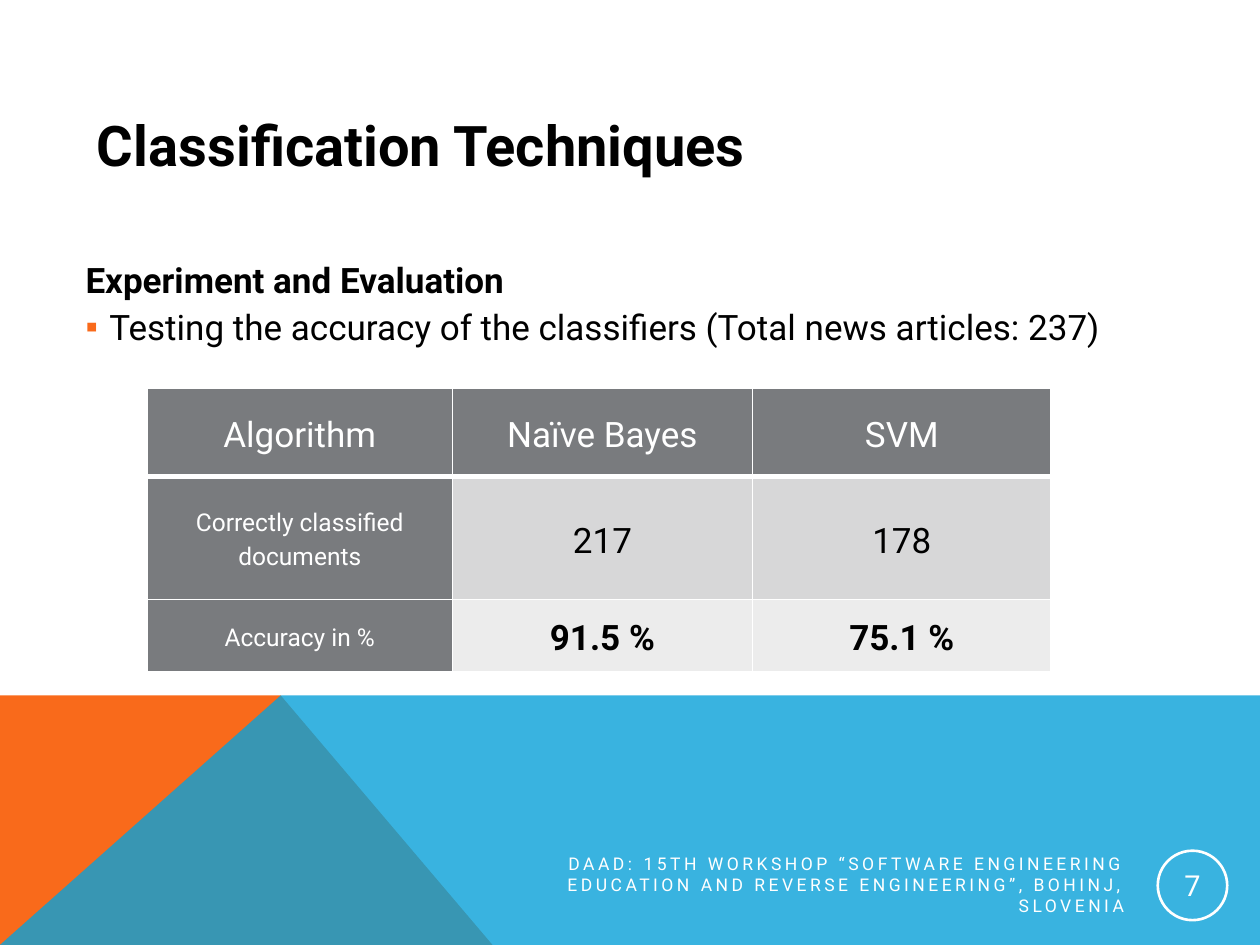
from lxml.etree import SubElement
from pptx import Presentation
from pptx.dml.color import RGBColor
from pptx.enum.shapes import MSO_SHAPE
from pptx.enum.text import MSO_ANCHOR as Anchor, MSO_AUTO_SIZE, PP_ALIGN as Align
from pptx.oxml.ns import qn
from pptx.util import Cm, Pt

COLORS = {
    "orange": "F96A1B",
    "blue": "08A1D9",
    "gray": "797B7E",
    "band_dark": "D7D7D8",
    "band_light": "ECECEC",
    "white": "FFFFFF",
    "black": "000000",
}
FONT = "Roboto"
WIDTH, HEIGHT = 25.4, 19.05


def rgb(name):
    return RGBColor.from_string(COLORS[name])


def write(paragraph, text, size=20, color="black", bold=False, align=Align.LEFT,
          before=0, line_spacing=None, tracking=None):
    paragraph.alignment = align
    paragraph.space_before = Pt(before)
    if line_spacing:
        paragraph.line_spacing = line_spacing
    run = paragraph.add_run()
    run.text = text
    font = run.font
    font.name, font.size, font.bold = FONT, Pt(size), bold
    font.color.rgb = rgb(color)
    if tracking:
        run._r.get_or_add_rPr().set("spc", str(tracking * 100))


def set_bullet(paragraph, indent, char=None, color="orange"):
    """Give the paragraph a hanging indent and a bullet, or none without char."""
    properties = paragraph._p.get_or_add_pPr()
    properties.set("marL", str(Cm(indent)))
    properties.set("indent", str(-Cm(indent)))
    if char is None:
        SubElement(properties, qn("a:buNone"))
        return
    bullet_color = SubElement(properties, qn("a:buClr"))
    SubElement(bullet_color, qn("a:srgbClr")).set("val", COLORS[color])
    SubElement(properties, qn("a:buChar")).set("char", char)


def place(shape, left, top, width, height):
    """Move a placeholder to the box and in front of the background."""
    shape.left, shape.top = Cm(left), Cm(top)
    shape.width, shape.height = Cm(width), Cm(height)
    shape.element.getparent().append(shape.element)
    frame = shape.text_frame
    frame.auto_size = MSO_AUTO_SIZE.NONE
    frame.vertical_anchor = Anchor.TOP
    frame.word_wrap = True
    return frame


def add_polygon(slide, points, color, opacity=None):
    start, *others = [(Cm(x), Cm(y)) for x, y in points]
    builder = slide.shapes.build_freeform(*start)
    builder.add_line_segments(others, close=True)
    shape = builder.convert_to_shape()
    shape.shadow.inherit = False
    shape.fill.solid()
    shape.fill.fore_color.rgb = rgb(color)
    shape.line.fill.background()
    if opacity:
        color_node = shape.element.spPr.find(qn("a:solidFill"))[0]
        SubElement(color_node, qn("a:alpha")).set("val", str(opacity * 1000))


def add_background(slide, left, top, width, height):
    bottom, peak = top + height, left + 5.66
    add_polygon(slide, [(left, bottom), (left, top), (peak, top),
                        (left + 9.93, bottom)], "orange")
    add_polygon(slide, [(left, bottom), (peak, top), (left + width, top),
                        (left + width, bottom)], "blue", opacity=80)


def add_title(slide, *box):
    paragraph = place(slide.shapes.title, *box).paragraphs[0]
    write(paragraph, "Classification Techniques", size=32, bold=True, before=8)


def add_body(slide, *box):
    frame = place(slide.placeholders[1], *box)
    heading = frame.paragraphs[0]
    write(heading, "Experiment and Evaluation", bold=True, before=8)
    set_bullet(heading, 0.97)
    item = frame.add_paragraph()
    item.level = 1
    write(item, "Testing the accuracy of the classifiers (Total news articles: 237)",
          before=3)
    set_bullet(item, 0.48, "▪")


def set_borders(cell, bottom_width):
    properties = cell._tc.get_or_add_tcPr()
    for side, width in (("L", 1), ("R", 1), ("T", 1), ("B", bottom_width)):
        line = SubElement(properties, qn(f"a:ln{side}"))
        line.set("w", str(Pt(width)))
        fill = SubElement(line, qn("a:solidFill"))
        SubElement(fill, qn("a:srgbClr")).set("val", COLORS["white"])


def add_results(slide, left, top, column_widths, row_heights):
    rows = [
        ("Algorithm", "Naïve Bayes", "SVM"),
        ("Correctly classified documents", "217", "178"),
        ("Accuracy in %", "91.5 %", "75.1 %"),
    ]
    row_fills = ("gray", "band_dark", "band_light")
    table = slide.shapes.add_table(
        len(rows), len(rows[0]), Cm(left), Cm(top),
        Cm(sum(column_widths)), Cm(sum(row_heights))).table
    for column, width in zip(table.columns, column_widths):
        column.width = Cm(width)
    for row, height in zip(table.rows, row_heights):
        row.height = Cm(height)
    for r, texts in enumerate(rows):
        for c, text in enumerate(texts):
            cell = table.cell(r, c)
            is_header = r == 0 or c == 0
            set_borders(cell, 3 if r == 0 else 1)
            cell.fill.solid()
            cell.fill.fore_color.rgb = rgb("gray" if is_header else row_fills[r])
            cell.vertical_anchor = Anchor.MIDDLE
            cell.margin_left = cell.margin_right = Cm(0.18)
            cell.margin_top = cell.margin_bottom = 0
            write(cell.text_frame.paragraphs[0], text,
                  size=14 if c == 0 and r > 0 else 20,
                  color="white" if is_header else "black",
                  bold=r == 2 and c > 0, align=Align.CENTER, line_spacing=1.15)


def add_footer(slide, left, top, width, height):
    box = slide.shapes.add_textbox(Cm(left), Cm(top), Cm(width), Cm(height))
    frame = box.text_frame
    frame.word_wrap = True
    frame.vertical_anchor = Anchor.MIDDLE
    write(frame.paragraphs[0],
          "DAAD: 15TH WORKSHOP “SOFTWARE ENGINEERING EDUCATION AND "
          "REVERSE ENGINEERING”, BOHINJ, SLOVENIA",
          size=10, color="white", align=Align.RIGHT, tracking=2)


def add_page_number(slide, left, top, diameter):
    circle = slide.shapes.add_shape(MSO_SHAPE.OVAL, Cm(left), Cm(top),
                                    Cm(diameter), Cm(diameter))
    circle.shadow.inherit = False
    circle.fill.background()
    circle.line.color.rgb = rgb("white")
    circle.line.width = Pt(1.5)
    frame = circle.text_frame
    frame.vertical_anchor = Anchor.MIDDLE
    frame.margin_left = frame.margin_right = Cm(0.03)
    frame.margin_top = frame.margin_bottom = Cm(0.03)
    write(frame.paragraphs[0], "7", size=16.5, color="white", align=Align.CENTER)


def main():
    presentation = Presentation()
    presentation.slide_width, presentation.slide_height = Cm(WIDTH), Cm(HEIGHT)
    slide = presentation.slides.add_slide(presentation.slide_layouts[1])
    band_top = 14.02
    add_background(slide, 0, band_top, WIDTH, HEIGHT - band_top)
    add_body(slide, 1.47, 5.08, 22.86, 10.59)
    add_title(slide, 1.7, 2.11, 22.86, 1.9)
    add_results(slide, 2.97, 7.82, (6.15, 6.05, 6.02), (1.78, 2.49, 1.45))
    add_footer(slide, 9.78, 17.45, 13.13, 0.76)
    add_page_number(slide, 23.34, 17.15, 1.4)
    presentation.save("out.pptx")


if __name__ == "__main__":
    main()
